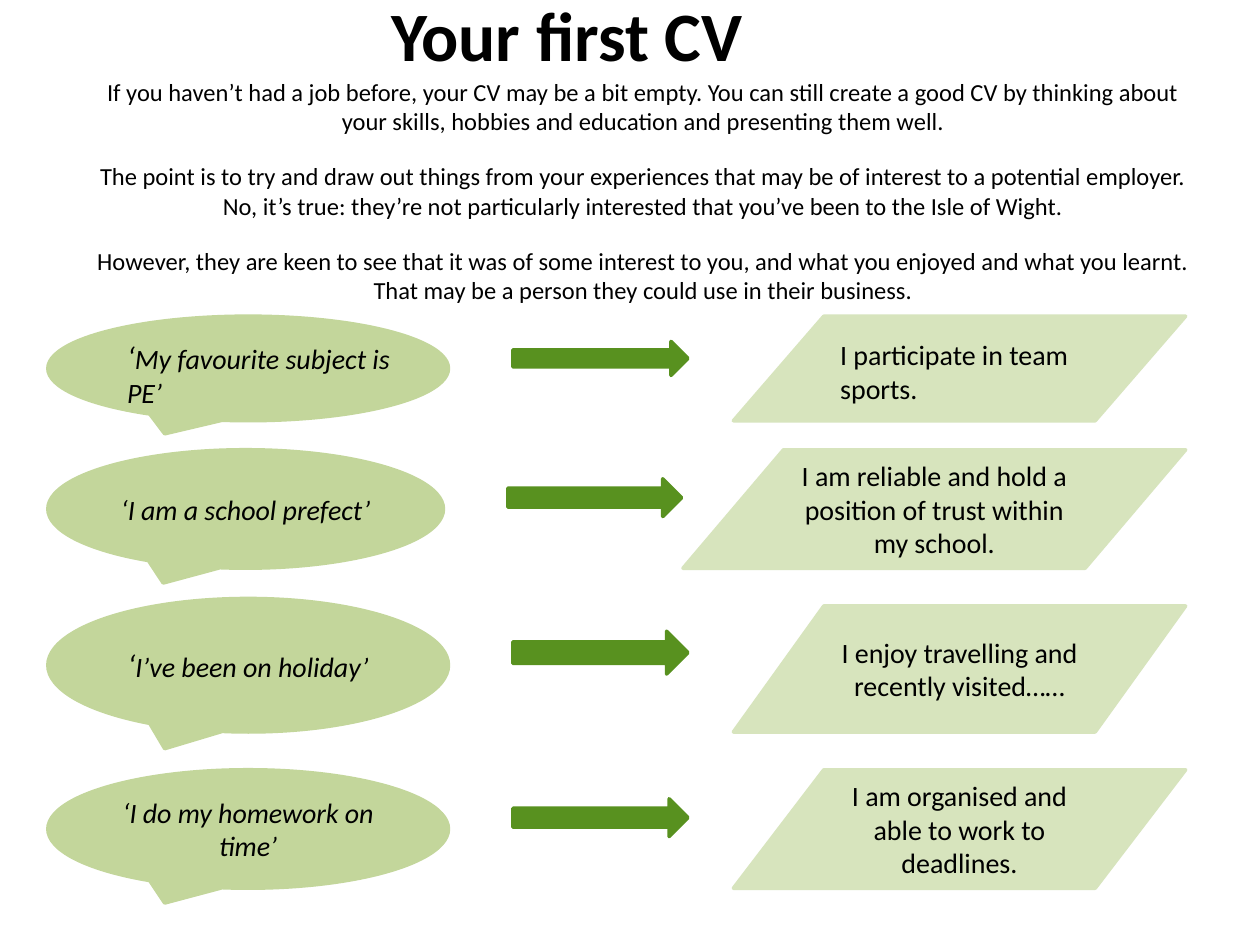
from dataclasses import dataclass

from pptx import Presentation
from pptx.dml.color import RGBColor
from pptx.enum.shapes import MSO_SHAPE
from pptx.enum.text import MSO_ANCHOR, PP_ALIGN
from pptx.shapes.autoshape import Shape
from pptx.slide import Slide
from pptx.text.text import _Paragraph
from pptx.util import Inches, Pt

BLACK = RGBColor(0x00, 0x00, 0x00)
CALLOUT_GREEN = RGBColor(0xC3, 0xD6, 0x9B)
ARROW_GREEN = RGBColor(0x58, 0x91, 0x1F)
ANSWER_GREEN = RGBColor(0xD7, 0xE4, 0xBD)
FONT_NAME = "Calibri"
CALLOUT_LEFT = 0.38
ANSWER_RIGHT = 9.41


@dataclass(frozen=True)
class Box:
    left: float
    top: float
    width: float
    height: float

    def lengths(self) -> tuple[Inches, Inches, Inches, Inches]:
        return Inches(self.left), Inches(self.top), Inches(self.width), Inches(self.height)


@dataclass(frozen=True)
class Example:
    """A plain statement and the CV wording it turns into."""
    statement: str
    answer: str
    top: float
    height: float
    arrow_top: float
    arrow_height: float
    arrow_left: float = 4.07
    arrow_width: float = 1.39
    callout_width: float = 3.18
    answer_width: float = 3.59
    answer_top: float | None = None
    quote_size: float = 16
    statement_box: Box | None = None
    answer_box: Box | None = None


INTRODUCTION = (
    "If you haven’t had a job before, your CV may be a bit empty. You can still create a good CV "
    "by thinking about your skills, hobbies and education and presenting them well.",
    "The point is to try and draw out things from your experiences that may be of interest to a "
    "potential employer. No, it’s true: they’re not particularly interested that you’ve been to "
    "the Isle of Wight.",
    "However, they are keen to see that it was of some interest to you, and what you enjoyed and "
    "what you learnt. That may be a person they could use in their business.",
)

EXAMPLES = (
    Example("‘My favourite subject is PE’", "I participate in team sports.",
            2.51, 0.83, 2.71, 0.27, quote_size=18,
            statement_box=Box(0.91, 2.63, 2.31, 0.67), answer_box=Box(6.57, 2.63, 2.2, 0.64)),
    Example("‘I am a school prefect’",
            "I am reliable and hold a position of trust within my school.",
            3.57, 0.94, 3.8, 0.3, arrow_left=4.03, arrow_width=1.38,
            callout_width=3.14, answer_width=3.99),
    Example("‘I’ve been on holiday’", "I enjoy travelling and recently visited……",
            4.75, 1.06, 5.01, 0.34, answer_top=4.81, quote_size=18),
    Example("‘I do my homework on time’", "I am organised and able to work to deadlines.",
            6.11, 0.94, 6.34, 0.3),
)


def style_paragraph(paragraph: _Paragraph, size: float, alignment: PP_ALIGN,
                    bold: bool = False, italic: bool = False) -> None:
    paragraph.alignment = alignment
    paragraph.font.name = FONT_NAME
    paragraph.font.size = Pt(size)
    paragraph.font.bold = bold
    paragraph.font.italic = italic
    paragraph.font.color.rgb = BLACK


def add_text_box(slide: Slide, box: Box) -> Shape:
    text_box = slide.shapes.add_textbox(*box.lengths())
    text_box.text_frame.word_wrap = True
    return text_box


def add_filled_shape(slide: Slide, kind: MSO_SHAPE, box: Box, color: RGBColor) -> Shape:
    shape = slide.shapes.add_shape(kind, *box.lengths())
    shape.shadow.inherit = False
    shape.fill.solid()
    shape.fill.fore_color.rgb = color
    shape.line.color.rgb = color
    shape.line.width = Pt(2)
    shape.text_frame.vertical_anchor = MSO_ANCHOR.MIDDLE
    return shape


def add_title(slide: Slide) -> None:
    text_frame = add_text_box(slide, Box(0, 0, 9, 0.54)).text_frame
    text_frame.margin_top = text_frame.margin_bottom = 0
    text_frame.vertical_anchor = MSO_ANCHOR.MIDDLE
    text_frame.text = "Your first CV"
    style_paragraph(text_frame.paragraphs[0], 39.6, PP_ALIGN.CENTER, bold=True)


def add_introduction(slide: Slide) -> None:
    text_frame = add_text_box(slide, Box(0.59, 0.56, 9.03, 2.15)).text_frame
    text_frame.text = "\n".join(INTRODUCTION)
    for index, paragraph in enumerate(text_frame.paragraphs):
        style_paragraph(paragraph, 14, PP_ALIGN.CENTER)
        paragraph.space_before = Pt(14.6 if index else 0)


def write_label(slide: Slide, shape: Shape, separate_box: Box | None, text: str,
                italic: bool = False, first_size: float = 16) -> None:
    """Write centred in the shape, or left-aligned in a box of its own laid over it."""
    holder = add_text_box(slide, separate_box) if separate_box else shape
    alignment = PP_ALIGN.LEFT if separate_box else PP_ALIGN.CENTER
    paragraph = holder.text_frame.paragraphs[0]
    style_paragraph(paragraph, 16, alignment, italic=italic)
    if first_size != 16:
        first_run = paragraph.add_run()
        first_run.text, text = text[0], text[1:]
        first_run.font.size = Pt(first_size)
    paragraph.add_run().text = text


def add_example(slide: Slide, example: Example) -> None:
    bottom = example.top + example.height
    answer_top = example.answer_top or example.top
    callout = add_filled_shape(
        slide, MSO_SHAPE.OVAL_CALLOUT,
        Box(CALLOUT_LEFT, example.top, example.callout_width, example.height), CALLOUT_GREEN)
    add_filled_shape(
        slide, MSO_SHAPE.RIGHT_ARROW,
        Box(example.arrow_left, example.arrow_top, example.arrow_width, example.arrow_height),
        ARROW_GREEN)
    answer = add_filled_shape(
        slide, MSO_SHAPE.FLOWCHART_DATA,
        Box(ANSWER_RIGHT - example.answer_width, answer_top,
            example.answer_width, bottom - answer_top), ANSWER_GREEN)
    write_label(slide, callout, example.statement_box, example.statement,
                italic=True, first_size=example.quote_size)
    write_label(slide, answer, example.answer_box, example.answer)


def main() -> None:
    presentation = Presentation()
    presentation.slide_width = Inches(10)
    presentation.slide_height = Inches(7.5)
    slide = presentation.slides.add_slide(presentation.slide_layouts[6])
    add_title(slide)
    add_introduction(slide)
    for example in EXAMPLES:
        add_example(slide, example)
    presentation.save("out.pptx")


if __name__ == "__main__":
    main()
